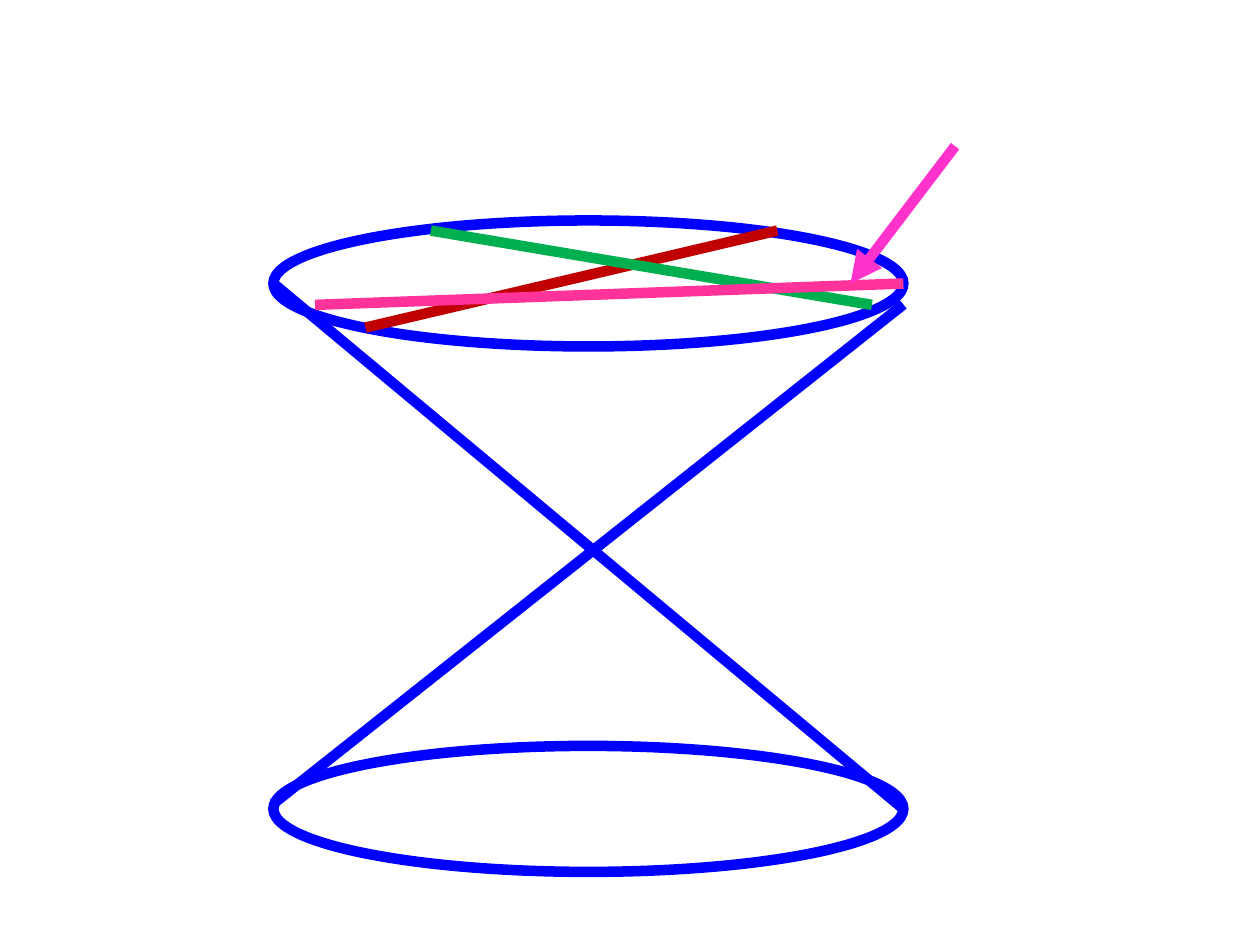
from lxml import etree
from pptx import Presentation, util as u
from pptx.dml.color import RGBColor
from pptx.enum import shapes
from pptx.oxml.ns import qn

SLIDE_W, SLIDE_H = 10, 7.5
BLUE, RED, GREEN = "0000FF", "C00000", "00B050"
PINK, MAGENTA = "FF3399", "FF33CC"
STROKE = 6


def paint_line(line, color):
    line.color.rgb = RGBColor.from_string(color)
    line.width = u.Pt(STROKE)


def add_ring(slide, left, top, width, height):
    ring = slide.shapes.add_shape(
        shapes.MSO_SHAPE.OVAL, *map(u.Inches, (left, top, width, height)))
    ring.shadow.inherit = False
    ring.fill.background()
    paint_line(ring.line, BLUE)


def add_stroke(slide, box, start, end, color, arrow=False):
    """Draw a line between two points given as shares of the box."""
    left, top, width, height = box
    ends = [u.Inches(value) for x, y in (start, end)
            for value in (left + x * width, top + y * height)]
    stroke = slide.shapes.add_connector(shapes.MSO_CONNECTOR.STRAIGHT, *ends)
    paint_line(stroke.line, color)
    if arrow:
        etree.SubElement(stroke.line._get_or_add_ln(), qn("a:tailEnd"), type="triangle")
    etree.SubElement(stroke._element.spPr, qn("a:effectLst"))


def draw_double_cone(slide, left, top, width, height, rim):
    # Upper and lower rims
    for rim_top in (top, top + height - rim):
        add_ring(slide, left, rim_top, width, rim)
    # Sides crossing at the apex, measured between the rim centres
    sides = (left, top + rim / 2, width, height - rim)
    add_stroke(slide, sides, (1, 0.04), (0, 0.99), BLUE)
    add_stroke(slide, sides, (1, 1), (0, 0), BLUE)


def draw_chords(slide, *rim_box):
    # Chords across the upper rim
    for start, end, color in (
            ((0.146, 0.85), (0.8, 0.08), RED),
            ((0.25, 0.08), (0.95, 0.67), GREEN),
            ((0.066, 0.67), (1, 0.5), PINK)):
        add_stroke(slide, rim_box, start, end, color)
    # Pointer to the pink chord
    add_stroke(slide, rim_box, (1.082, -0.59), (0.916, 0.5), MAGENTA, arrow=True)


def main():
    deck = Presentation()
    deck.slide_width, deck.slide_height = u.Inches(SLIDE_W), u.Inches(SLIDE_H)
    slide = deck.slides.add_slide(deck.slide_layouts[6])

    left, top = 2.17, 1.75
    width, rim = SLIDE_W / 2, 1
    draw_double_cone(slide, left, top, width, 5.17, rim)
    draw_chords(slide, left, top, width, rim)
    deck.save("out.pptx")


if __name__ == "__main__":
    main()
